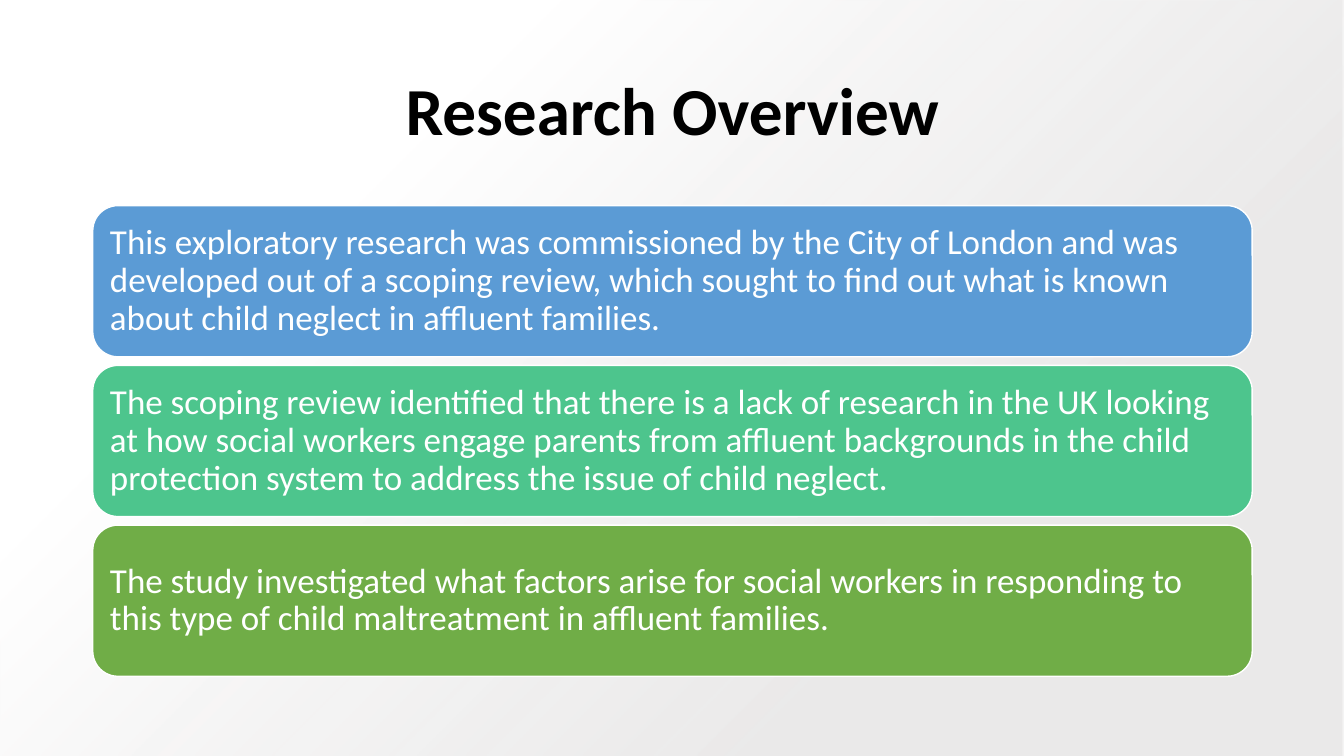
from pptx import Presentation
from pptx.dml.color import RGBColor
from pptx.enum.shapes import MSO_SHAPE
from pptx.enum.text import MSO_ANCHOR, PP_ALIGN
from pptx.oxml import parse_xml
from pptx.oxml.ns import nsdecls, qn
from pptx.util import Inches, Pt

RECT, ROUNDED = MSO_SHAPE.RECTANGLE, MSO_SHAPE.ROUNDED_RECTANGLE
MIDDLE = MSO_ANCHOR.MIDDLE
LEFT, CENTER = PP_ALIGN.LEFT, PP_ALIGN.CENTER

WIDTH, HEIGHT = 13.33, 7.5
MARGIN, COLUMN = 0.92, 11.5
CARD_TOP, CARD_HEIGHT, CARD_STEP = 2.04, 1.5, 1.585
FONT = "Calibri"
COLORS = {
    "white": "FFFFFF",
    "black": "000000",
    "grey": "E7E6E6",
    "blue": "5B9BD5",
    "teal": "4DC58D",
    "green": "70AD47",
}
CARDS = [
    ("blue", "This exploratory research was commissioned by the City of London "
     "and was developed out of a scoping review, which sought to find out what "
     "is known about child neglect in affluent families."),
    ("teal", "The scoping review identified that there is a lack of research in "
     "the UK looking at how social workers engage parents from affluent "
     "backgrounds in the child protection system to address the issue of child "
     "neglect."),
    ("green", "The study investigated what factors arise for social workers in "
     "responding to this type of child maltreatment in affluent families."),
]


def rgb(name):
    return RGBColor.from_string(COLORS[name])


def add_backdrop(s):
    sp = s.shapes.add_shape(RECT, 0, 0, Inches(WIDTH), Inches(HEIGHT))
    sp.shadow.inherit = False
    sp.line.fill.background()
    sp.fill.solid()
    gradient = parse_xml(
        f'<a:gradFill {nsdecls("a")} rotWithShape="1"><a:gsLst>'
        f'<a:gs pos="28000"><a:srgbClr val="{COLORS["grey"]}">'
        '<a:alpha val="84000"/></a:srgbClr></a:gs>'
        f'<a:gs pos="74000"><a:srgbClr val="{COLORS["white"]}"/></a:gs>'
        '</a:gsLst><a:path path="circle">'
        '<a:fillToRect l="100000" t="100000"/></a:path></a:gradFill>')
    props = sp.element.spPr
    props.replace(props.find(qn("a:solidFill")), gradient)


def write(sp, text, size, color, align, bold=False, inset=0.1):
    tf = sp.text_frame
    tf.word_wrap = True
    tf.vertical_anchor = MIDDLE
    tf.margin_left = tf.margin_right = Inches(inset)
    p = tf.paragraphs[0]
    p.alignment = align
    p.line_spacing = 0.9
    r = p.add_run()
    r.text = text
    r.font.name = FONT
    r.font.size = Pt(size)
    r.font.bold = bold
    r.font.color.rgb = rgb(color)


def add_title(s, text):
    sp = s.shapes.add_textbox(
        Inches(MARGIN), Inches(0.4), Inches(COLUMN), Inches(1.45))
    write(sp, text, 48, "black", CENTER, bold=True)


def add_card(s, row, color, text):
    sp = s.shapes.add_shape(
        ROUNDED, Inches(MARGIN), Inches(CARD_TOP + row * CARD_STEP),
        Inches(COLUMN), Inches(CARD_HEIGHT))
    sp.shadow.inherit = False
    sp.fill.solid()
    sp.fill.fore_color.rgb = rgb(color)
    sp.line.color.rgb = rgb("white")
    sp.line.width = Pt(1)
    write(sp, text, 25, "white", LEFT, inset=0.1)


def main():
    prs = Presentation()
    prs.slide_width, prs.slide_height = Inches(WIDTH), Inches(HEIGHT)
    s = prs.slides.add_slide(prs.slide_layouts[6])
    add_backdrop(s)
    add_title(s, "Research Overview")
    for row, (color, text) in enumerate(CARDS):
        add_card(s, row, color, text)
    prs.save("out.pptx")


if __name__ == "__main__":
    main()
